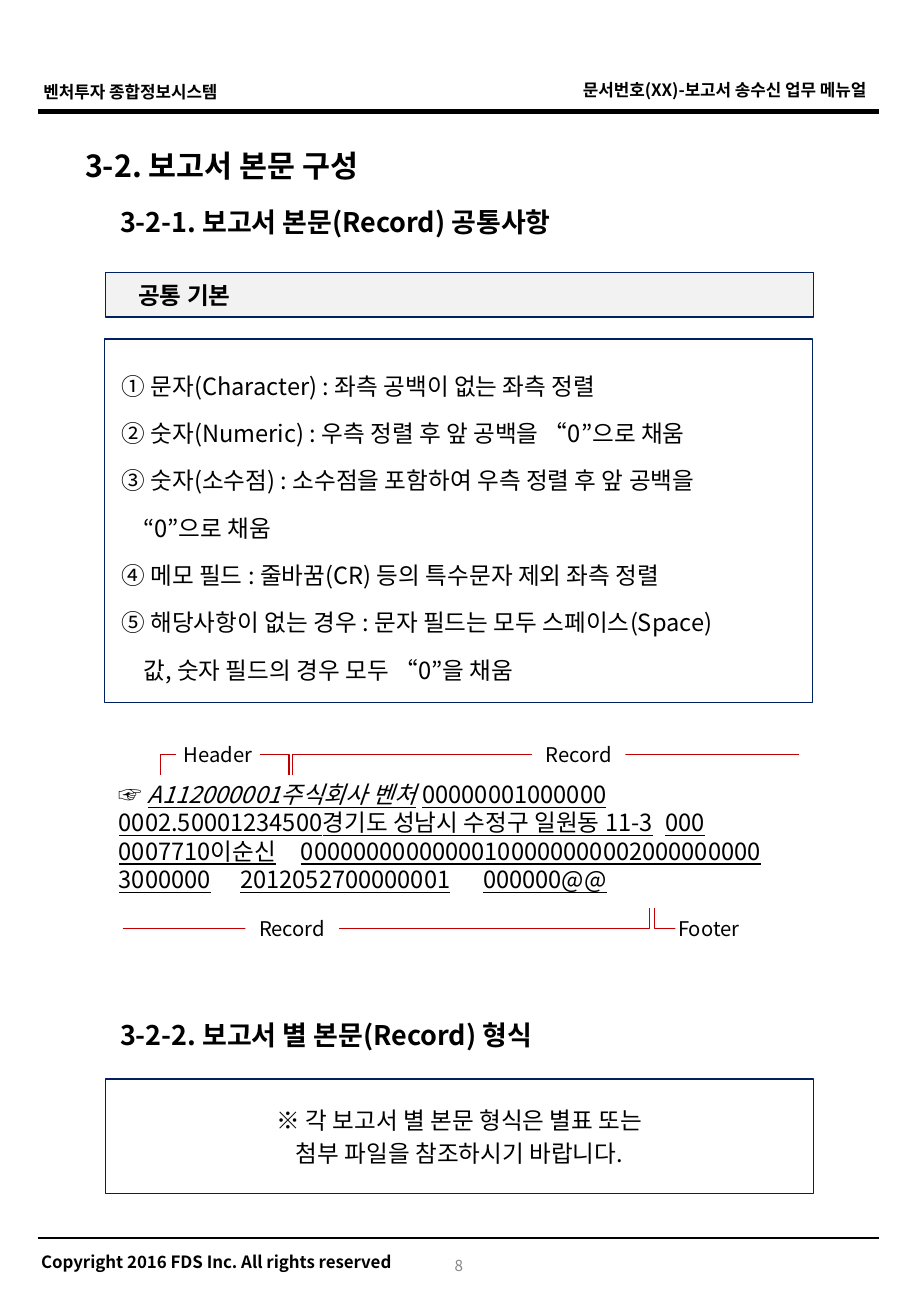
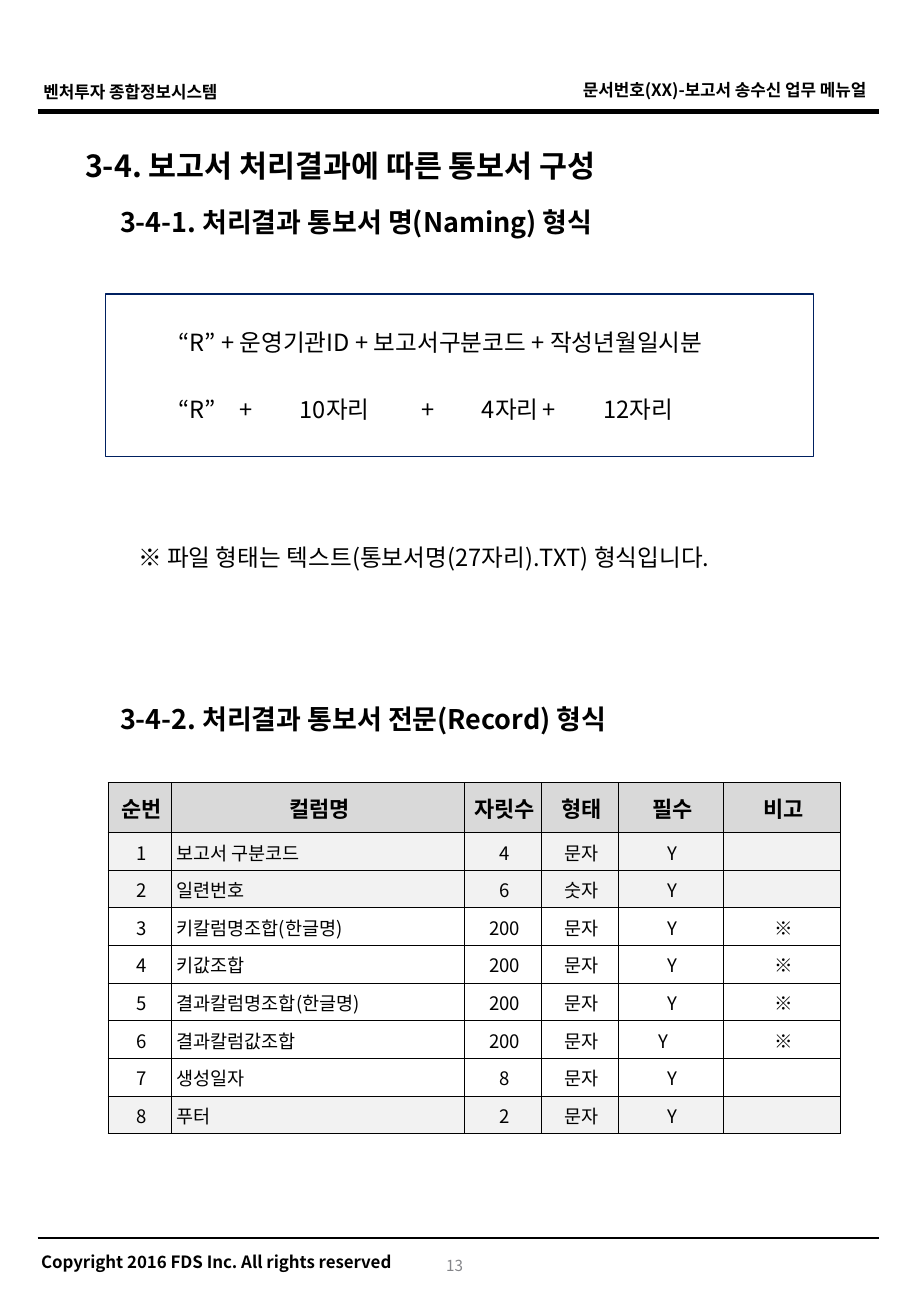
from lxml import etree
from pptx import Presentation
from pptx.dml.color import RGBColor
from pptx.enum.shapes import MSO_CONNECTOR, MSO_SHAPE
from pptx.enum.text import MSO_ANCHOR, MSO_AUTO_SIZE, PP_ALIGN
from pptx.oxml.ns import qn
from pptx.util import Inches, Pt

LEFT, CENTER, RIGHT = PP_ALIGN.LEFT, PP_ALIGN.CENTER, PP_ALIGN.RIGHT
TOP, MIDDLE, BOTTOM = MSO_ANCHOR.TOP, MSO_ANCHOR.MIDDLE, MSO_ANCHOR.BOTTOM
NO_FIT = MSO_AUTO_SIZE.NONE
STRAIGHT, ELBOW = MSO_CONNECTOR.STRAIGHT, MSO_CONNECTOR.ELBOW
RECT = MSO_SHAPE.RECTANGLE

FONT = "Noto Sans CJK KR"
COLORS = {
    "text": "000000",
    "page": "848589",
    "frame": "002060",
    "bracket": "C00000",
    "head": "D9D9D9",
    "light": "F2F2F2",
    "white": "FFFFFF",
}
MARGINS = (0.1, 0.05, 0.1, 0.05)

RULES = [
    "① 문자(Character) : 좌측 공백이 없는 좌측 정렬",
    "② 숫자(Numeric) : 우측 정렬 후 앞 공백을 “0”으로 채움",
    "③ 숫자(소수점) : 소수점을 포함하여 우측 정렬 후 앞 공백을",
    "“0”으로 채움",
    "④ 메모 필드 : 줄바꿈(CR) 등의 특수문자 제외 좌측 정렬",
    "⑤ 해당사항이 없는 경우 : 문자 필드는 모두 스페이스(Space)",
    "값, 숫자 필드의 경우 모두 “0”을 채움",
]
RECORD = [
    [("☞ ", ""), ("A112000001주식회사 벤처", "iu"), ("\t00000001000000", "u")],
    [("0002.50001234500경기도 성남시 수정구 일원동 11-3\t000\t", "u")],
    [("0007710이순신\t00000000000000100000000002000000000", "u")],
    [("3000000\t2012052700000001\t000000@@", "u")],
]
RECORD_TABS = [[4.11], [4.86, 5.62], [1.84], [1.19, 3.27]]
BRACKETS = [
    (1.32, 6.38, 1.45, 6.21, 0),
    (2.14, 6.21, 2.38, 6.38, 100000),
    (2.41, 6.38, 6.58, 6.21, 0),
    (1.01, 7.64, 5.35, 7.47, 100000),
    (5.39, 7.47, 5.76, 7.64, 0),
]
BRACKET_LABELS = [
    ("Header", 1.45, 6.13, 0.69),
    ("Record", 4.38, 6.13, 0.77),
    ("Record", 2.02, 7.56, 0.77),
    ("Footer", 5.56, 7.56, 0.55),
]
COLUMNS = [
    ("순번", 0.52),
    ("컬럼명", 2.41),
    ("자릿수", 0.64),
    ("형태", 0.63),
    ("필수", 0.87),
    ("비고", 0.96),
]
FIELDS = [
    ("보고서 구분코드", "4", "문자", "Y", ""),
    ("일련번호", "6", "숫자", "Y", ""),
    ("키칼럼명조합(한글명)", "200", "문자", "Y", "※"),
    ("키값조합", "200", "문자", "Y", "※"),
    ("결과칼럼명조합(한글명)", "200", "문자", "Y", "※"),
    ("결과칼럼값조합", "200", "문자", "Y　", "※"),
    ("생성일자", "8", "문자", "Y", ""),
    ("푸터", "2", "문자", "Y", ""),
]
SHADED_ROWS = (1, 2, 8)


def rgb(name):
    return RGBColor.from_string(COLORS[name])


def add_run(p, text, style, size, bold, color):
    r = p.add_run()
    r.text = text
    r.font.name = FONT
    r.font.size = Pt(size)
    r.font.bold = bold
    r.font.color.rgb = rgb(color)
    if "i" in style:
        r.font.italic = True
    if "u" in style:
        r.font.underline = True
    ea = etree.SubElement(r.font._element, qn("a:ea"))
    ea.set("typeface", FONT)
    r.font._element.find(qn("a:latin")).addnext(ea)


def write(tf, lines, size=14, bold=False, color="text", align=LEFT,
          before=0, spacing=1, indents=None, tabs=None):
    for i, line in enumerate(lines):
        p = tf.paragraphs[0] if i == 0 else tf.add_paragraph()
        pPr = p._p.get_or_add_pPr()
        pPr.set("marL", str(Inches(indents[i] if indents else 0)))
        pPr.set("indent", "0")
        etree.SubElement(pPr, qn("a:buNone"))
        if tabs and tabs[i]:
            tab_list = etree.SubElement(pPr, qn("a:tabLst"))
            for stop in tabs[i]:
                etree.SubElement(tab_list, qn("a:tab"),
                                 pos=str(Inches(stop)), algn="l")
        p.alignment = align
        p.line_spacing = spacing
        p.space_before = Pt(before if i else 0)
        runs = [(line, "")] if isinstance(line, str) else line
        for text, style in runs:
            add_run(p, text, style, size, bold, color)


def set_frame(tf, anchor, margins=MARGINS):
    tf.word_wrap = True
    tf.auto_size = NO_FIT
    tf.vertical_anchor = anchor
    (tf.margin_left, tf.margin_top,
     tf.margin_right, tf.margin_bottom) = map(Inches, margins)


def add_text(slide, box, lines, anchor=TOP, **fmt):
    sp = slide.shapes.add_textbox(*map(Inches, box))
    set_frame(sp.text_frame, anchor)
    write(sp.text_frame, lines, **fmt)


def fill_placeholder(sp, box, lines, anchor, **fmt):
    sp.left, sp.top, sp.width, sp.height = map(Inches, box)
    set_frame(sp.text_frame, anchor)
    write(sp.text_frame, lines, **fmt)


def set_outline(sp):
    sp.line.color.rgb = rgb("frame")
    sp.line.width = Pt(0.75)


def add_box(slide, box, lines, fill=None, outline=True, margins=MARGINS, **fmt):
    sp = slide.shapes.add_shape(RECT, *map(Inches, box))
    sp.shadow.inherit = False
    if fill:
        sp.fill.solid()
        sp.fill.fore_color.rgb = rgb(fill)
    else:
        sp.fill.background()
    if outline:
        set_outline(sp)
    else:
        sp.line.fill.background()
    set_frame(sp.text_frame, MIDDLE, margins)
    write(sp.text_frame, lines, **fmt)


def add_line(slide, x1, y1, x2, y2, color, width, bend=None):
    kind = STRAIGHT if bend is None else ELBOW
    line = slide.shapes.add_connector(kind, *map(Inches, (x1, y1, x2, y2)))
    line.line.color.rgb = rgb(color)
    line.line.width = Pt(width)
    spPr = line._element.spPr
    etree.SubElement(spPr, qn("a:effectLst"))
    if bend is not None:
        adjust = spPr.find(qn("a:prstGeom")).get_or_add_avLst()
        etree.SubElement(adjust, qn("a:gd"), name="adj1", fmla=f"val {bend}")


def add_page(prs, layout, title, page):
    slide = prs.slides.add_slide(prs.slide_layouts[layout])
    add_line(slide, 0.31, 0.92, 7.24, 0.92, "text", 3)
    add_line(slide, 0.31, 10.19, 7.24, 10.19, "text", 1.25)
    for box, text, align in (
        ((0.26, 0.62, 3.33, 0.27), "벤처투자 종합정보시스템", LEFT),
        ((3.12, 0.61, 4.11, 0.27), "문서번호(XX)-보고서 송수신 업무 메뉴얼", RIGHT),
        ((0.24, 10.25, 3.34, 0.27),
         "Copyright 2016 FDS Inc. All rights reserved", LEFT),
    ):
        add_text(slide, box, [text], size=10, bold=True, align=align)
    add_text(slide, (3.42, 10.19, 0.49, 0.35), [page], BOTTOM,
             size=9, color="page", align=RIGHT)
    fill_placeholder(slide.shapes.title, (0.6, 1.16, 6.61, 0.39), [title], TOP,
                     size=18, bold=True)
    return slide


def add_subtitle(slide, top, text):
    add_text(slide, (0.89, top, 6.61, 0.39), [text], size=16, bold=True)


def set_borders(cell):
    tcPr = cell._tc.get_or_add_tcPr()
    for i, side in enumerate(("lnL", "lnR", "lnT", "lnB")):
        ln = etree.Element(qn(f"a:{side}"), w=str(Pt(0.5)))
        solid = etree.SubElement(ln, qn("a:solidFill"))
        etree.SubElement(solid, qn("a:srgbClr"), val=COLORS["text"])
        tcPr.insert(i, ln)


def add_field_table(slide):
    rows = [[name for name, _ in COLUMNS]]
    rows += [(str(i), *field) for i, field in enumerate(FIELDS, 1)]
    box = map(Inches, (0.89, 6.44, 6.03, 2.89))
    table = slide.shapes.add_table(len(rows), len(COLUMNS), *box).table
    table.first_row = table.horz_banding = False
    for column, (_, width) in zip(table.columns, COLUMNS):
        column.width = Inches(width)
    for i, row in enumerate(rows):
        table.rows[i].height = Inches(0.31 if i else 0.41)
        for j, text in enumerate(row):
            cell = table.cell(i, j)
            cell.vertical_anchor = MIDDLE
            cell.margin_left = Inches(0.04)
            cell.margin_top = cell.margin_right = Inches(0.01)
            cell.margin_bottom = 0
            fill = "light" if i in SHADED_ROWS else "white"
            cell.fill.solid()
            cell.fill.fore_color.rgb = rgb(fill if i else "head")
            set_borders(cell)
            write(cell.text_frame, [text], size=11 if i else 13, bold=i == 0,
                  align=LEFT if i and j == 1 else CENTER)


def build_body_slide(prs):
    slide = add_page(prs, 1, "3-2. 보고서 본문 구성", "8")
    add_subtitle(slide, 1.64, "3-2-1. 보고서 본문(Record) 공통사항")
    add_box(slide, (0.87, 2.24, 5.83, 0.37), ["공통 기본"], fill="light",
            bold=True, indents=[0.17])
    rules = slide.placeholders[1]
    indents = [0.04 if text[0] in "①②③④⑤" else 0.22 for text in RULES]
    fill_placeholder(rules, (0.86, 2.79, 5.83, 2.99), RULES, MIDDLE,
                     before=2.8, spacing=1.5, indents=indents)
    set_outline(rules)
    add_text(slide, (0.88, 6.21, 5.83, 1.35), RECORD, MIDDLE, tabs=RECORD_TABS)
    for x1, y1, x2, y2, bend in BRACKETS:
        add_line(slide, x1, y1, x2, y2, "bracket", 0.75, bend)
    for text, left, top, width in BRACKET_LABELS:
        add_box(slide, (left, top, width, 0.16), [text], fill="white",
                outline=False, margins=(0, 0.05, 0, 0.05), size=12, align=CENTER)
    add_subtitle(slide, 8.33, "3-2-2. 보고서 별 본문(Record) 형식")
    add_box(slide, (0.87, 8.88, 5.83, 0.94),
            ["※ 각 보고서 별 본문 형식은 별표 또는", "첨부 파일을 참조하시기 바랍니다."],
            align=CENTER, before=2.8)


def build_result_slide(prs):
    slide = add_page(prs, 5, "3-4. 보고서 처리결과에 따른 통보서 구성", "13")
    add_subtitle(slide, 1.64, "3-4-1. 처리결과 통보서 명(Naming) 형식")
    add_box(slide, (0.87, 2.42, 5.83, 1.34),
            ["\t“R” + 운영기관ID + 보고서구분코드 + 작성년월일시분",
             "\t“R”\t+\t10자리\t+\t4자리\t+\t12자리"],
            before=22.6,
            tabs=[[0.53], [1.11, 1.5, 1.7, 2.59, 2.86, 3.65, 3.88]])
    add_text(slide, (0.87, 4.15, 5.83, 0.87),
             ["※ 파일 형태는 텍스트(통보서명(27자리).TXT) 형식입니다."],
             MIDDLE, indents=[0.17])
    add_subtitle(slide, 5.73, "3-4-2. 처리결과 통보서 전문(Record) 형식")
    add_field_table(slide)


def main():
    prs = Presentation()
    prs.slide_width, prs.slide_height = Inches(7.5), Inches(10.83)
    build_body_slide(prs)
    build_result_slide(prs)
    prs.save("out.pptx")


if __name__ == "__main__":
    main()
